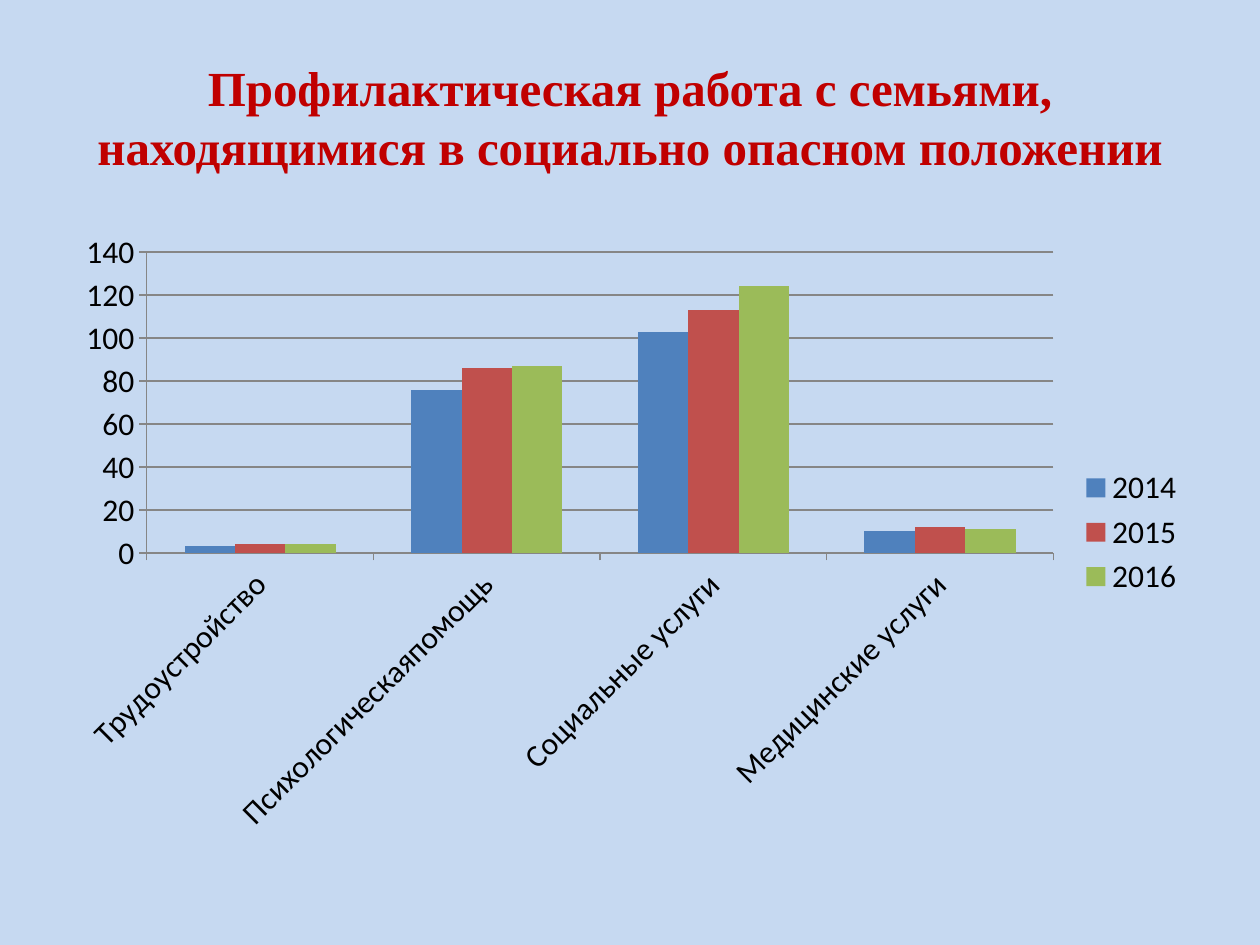
import pptx
import pptx.chart.data
import pptx.dml.color
import pptx.enum.chart
import pptx.enum.text
import pptx.util


def color(hex_value):
    return pptx.dml.color.RGBColor.from_string(hex_value)


def apply_format(target, values):
    for name, value in values.items():
        setattr(target, name, value)


class SlideBuilder:
    """Holds the style and the current slide; lengths are shares of the slide."""

    BACKGROUND = "C6D9F1"
    TITLE_COLOR = "C00000"
    TEXT_COLOR = "000000"
    GRID_COLOR = "868686"
    SERIES_COLORS = ("4F81BD", "C0504D", "9BBB59")
    TITLE_FONT = {"name": "Times New Roman", "size": pptx.util.Pt(28), "bold": True}
    CHART_FONT = {"name": "Calibri", "size": pptx.util.Pt(18), "bold": False}

    def __init__(self, presentation):
        self.width = presentation.slide_width
        self.height = presentation.slide_height
        self.slide = presentation.slides.add_slide(presentation.slide_layouts[5])
        fill = self.slide.background.fill
        fill.solid()
        fill.fore_color.rgb = color(self.BACKGROUND)

    def box(self, left, top, width, height):
        return (round(left * self.width), round(top * self.height),
                round(width * self.width), round(height * self.height))

    def title(self, text, *shares):
        shape = self.slide.shapes.title
        apply_format(shape, dict(zip(("left", "top", "width", "height"), self.box(*shares))))
        frame = shape.text_frame
        apply_format(frame, {"text": text, "word_wrap": True,
                             "vertical_anchor": pptx.enum.text.MSO_ANCHOR.MIDDLE})
        paragraph = frame.paragraphs[0]
        paragraph.alignment = pptx.enum.text.PP_ALIGN.CENTER
        font = paragraph.runs[0].font
        apply_format(font, self.TITLE_FONT)
        font.color.rgb = color(self.TITLE_COLOR)

    def column_chart(self, categories, series_values, *shares):
        data = pptx.chart.data.CategoryChartData()
        data.categories = categories
        for name, values in series_values.items():
            data.add_series(name, values)
        chart = self.slide.shapes.add_chart(
            pptx.enum.chart.XL_CHART_TYPE.COLUMN_CLUSTERED, *self.box(*shares), data).chart
        chart.has_title = False
        apply_format(chart.font, self.CHART_FONT)
        chart.font.color.rgb = color(self.TEXT_COLOR)

        # Columns
        plot = chart.plots[0]
        apply_format(plot, {"gap_width": 150, "overlap": 0, "vary_by_categories": False})
        for series, hex_value in zip(plot.series, self.SERIES_COLORS):
            series.format.fill.solid()
            series.format.fill.fore_color.rgb = color(hex_value)

        # Axes and gridlines
        chart.value_axis.has_major_gridlines = True
        for axis in (chart.category_axis, chart.value_axis):
            axis.major_tick_mark = pptx.enum.chart.XL_TICK_MARK.OUTSIDE
            axis.minor_tick_mark = pptx.enum.chart.XL_TICK_MARK.NONE
            self.grey_line(axis.format.line)
        self.grey_line(chart.value_axis.major_gridlines.format.line)

        # Legend
        chart.has_legend = True
        apply_format(chart.legend, {"position": pptx.enum.chart.XL_LEGEND_POSITION.RIGHT,
                                    "include_in_layout": False})

    def grey_line(self, line):
        line.color.rgb = color(self.GRID_COLOR)
        line.width = pptx.util.Pt(0.75)


def main():
    presentation = pptx.Presentation()
    apply_format(presentation, {"slide_width": pptx.util.Inches(10),
                                "slide_height": pptx.util.Inches(7.5)})
    builder = SlideBuilder(presentation)

    # Title
    builder.title("Профилактическая работа с семьями, находящимися в социально опасном положении",
                  0.05, 0.04, 0.9, 1 / 6)

    # Services by year
    builder.column_chart(
        ["Трудоустройство", "Психологическаяпомощь", "Социальные услуги", "Медицинские услуги"],
        {"2014": (3, 76, 103, 10), "2015": (4, 86, 113, 12), "2016": (4, 87, 124, 11)},
        0.05, 0.7 / 3, 0.9, 0.66)

    presentation.save("out.pptx")


if __name__ == "__main__":
    main()
